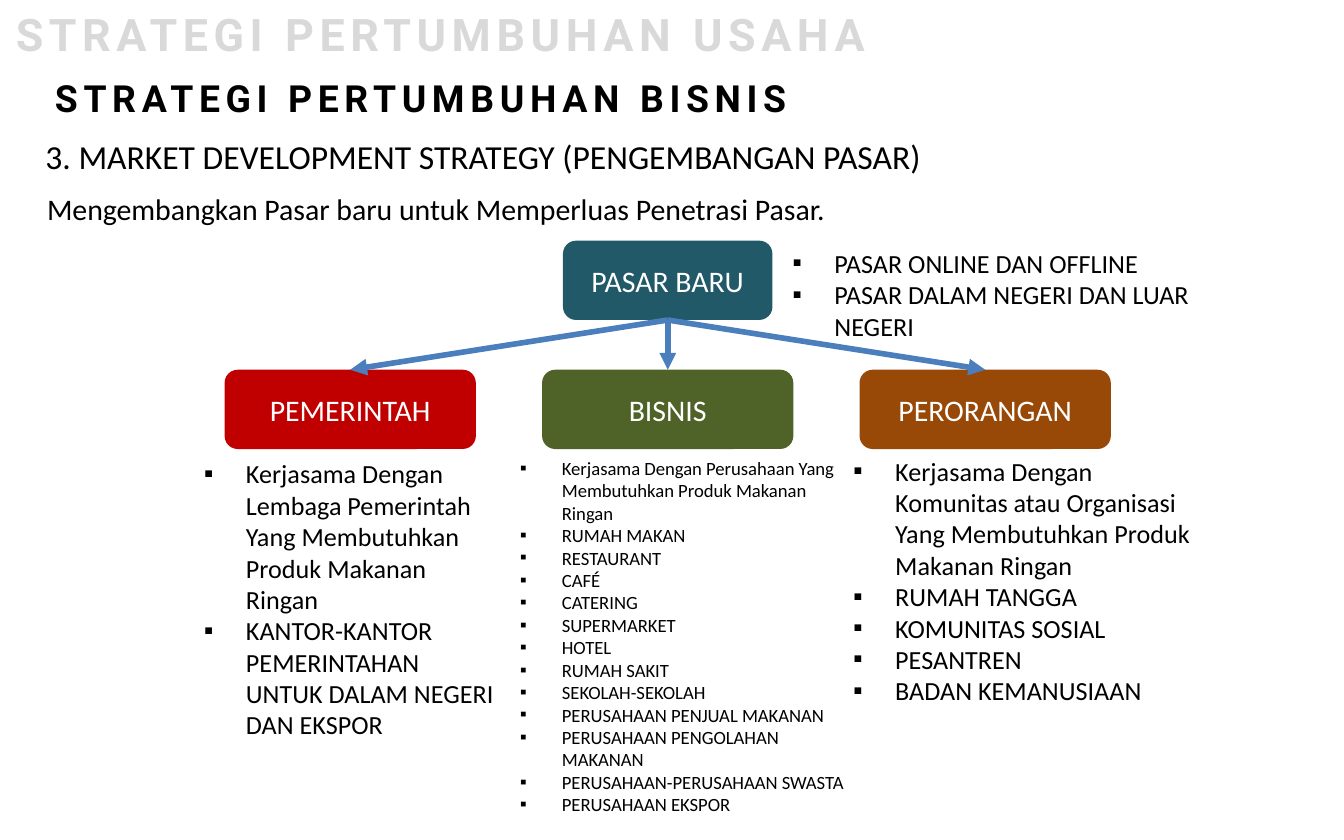
from lxml.etree import SubElement
from pptx import Presentation
from pptx.dml.color import RGBColor
from pptx.enum.shapes import MSO_CONNECTOR as Connector, MSO_SHAPE as Shape
from pptx.enum.text import MSO_ANCHOR as Anchor, MSO_AUTO_SIZE as AutoSize, PP_ALIGN as Align
from pptx.oxml.ns import qn
from pptx.util import Cm, Pt


def color(value):
    return RGBColor.from_string(value)


def write(shape, lines, size, ink="000000", bullet=False, spacing=0, frame_format=None, align=None, **font_format):
    frame = shape.text_frame
    frame_format = {"word_wrap": True, "auto_size": AutoSize.SHAPE_TO_FIT_TEXT} | (frame_format or {})
    for name, value in frame_format.items():
        setattr(frame, name, value)
    for index, line in enumerate(lines):
        paragraph = frame.paragraphs[0] if index == 0 else frame.add_paragraph()
        paragraph.alignment = align
        if bullet:
            properties = paragraph._p.get_or_add_pPr()
            properties.set("marL", str(Cm(0.79)))
            properties.set("indent", str(-Cm(0.79)))
            SubElement(properties, qn("a:buFont")).set("typeface", "Calibri")
            SubElement(properties, qn("a:buChar")).set("char", "▪")
        run = paragraph.add_run()
        run.text = line
        for name, value in ({"name": "Calibri", "size": Pt(size)} | font_format).items():
            setattr(run.font, name, value)
        run.font.color.rgb = color(ink)
        if spacing:
            run.font._element.set("spc", str(spacing * 100))


presentation = Presentation()
presentation.slide_width, presentation.slide_height = Cm(25.4), Cm(15.88)
slide = presentation.slides.add_slide(presentation.slide_layouts[6])
shapes = slide.shapes

# Headings: left, top, width, height, text, format
roboto = {"name": "Roboto", "bold": True, "spacing": 3}
headings = [
    (0.61, 2.44, 17.22, 1.02, "3. MARKET DEVELOPMENT STRATEGY (PENGEMBANGAN PASAR)",
     {"size": 18, "frame_format": {"word_wrap": False}}),
    (0.64, 3.48, 23.5, 0.94, "Mengembangkan Pasar baru untuk Memperluas Penetrasi Pasar.", {"size": 16}),
    (0.79, 1.3, 23.93, 1.12, "STRATEGI PERTUMBUHAN BISNIS", {"size": 20} | roboto),
    (0.05, 0, 25.4, 1.27, "STRATEGI PERTUMBUHAN USAHA", {"size": 24, "ink": "D9D9D9"} | roboto),
]
for *place, text, text_format in headings:
    write(shapes.add_textbox(*map(Cm, place)), [text], **text_format)

# Market boxes: centre, top, width, fill, label
middle, step = 12.62, 6
root_top, branch_top, box_height = 4.55, 6.99, 1.5
boxes = [
    (middle, root_top, 3.96, "215968", "PASAR BARU"),
    (middle - step, branch_top, 4.75, "C00000", "PEMERINTAH"),
    (middle, branch_top, 4.75, "4F6228", "BISNIS"),
    (middle + step, branch_top, 4.75, "984807", "PERORANGAN"),
]
for center, top, width, fill, label in boxes:
    box = shapes.add_shape(Shape.ROUNDED_RECTANGLE, Cm(center - width / 2), Cm(top), Cm(width), Cm(box_height))
    box.shadow.inherit = False
    box.fill.solid()
    box.fill.fore_color.rgb = color(fill)
    box.line.fill.background()
    box_frame = {"auto_size": AutoSize.NONE, "vertical_anchor": Anchor.MIDDLE}
    write(box, [label], 16, "FFFFFF", frame_format=box_frame, align=Align.CENTER)

# Arrows from the new market to its three branches
for offset in (0, -step, step):
    arrow = shapes.add_connector(Connector.STRAIGHT, Cm(middle), Cm(root_top + box_height),
                                 Cm(middle + offset), Cm(branch_top))
    arrow.line.color.rgb = color("4B7EBC")
    arrow.line.width = Pt(3)
    SubElement(arrow.line._get_or_add_ln(), qn("a:tailEnd")).set("type", "triangle")
    SubElement(arrow._element.spPr, qn("a:effectLst"))

# Bullet lists: left, top, width, height, size, lines
lists = [
    (3.61, 8.53, 6, 5.64, 14, [
        "Kerjasama Dengan Lembaga Pemerintah Yang Membutuhkan Produk Makanan Ringan",
        "KANTOR-KANTOR PEMERINTAHAN UNTUK DALAM NEGERI DAN EKSPOR",
    ]),
    (9.58, 8.51, 6.93, 7.09, 10, [
        "Kerjasama Dengan Perusahaan Yang Membutuhkan Produk Makanan Ringan",
        "RUMAH MAKAN", "RESTAURANT", "CAFÉ", "CATERING", "SUPERMARKET", "HOTEL",
        "RUMAH SAKIT", "SEKOLAH-SEKOLAH", "PERUSAHAAN PENJUAL MAKANAN",
        "PERUSAHAAN PENGOLAHAN MAKANAN", "PERUSAHAAN-PERUSAHAAN SWASTA", "PERUSAHAAN EKSPOR",
    ]),
    (15.88, 8.48, 7.16, 5.05, 14, [
        "Kerjasama Dengan Komunitas atau Organisasi Yang Membutuhkan Produk Makanan Ringan",
        "RUMAH TANGGA", "KOMUNITAS SOSIAL", "PESANTREN", "BADAN KEMANUSIAAN",
    ]),
    (14.73, 4.55, 8.36, 2.06, 14, [
        "PASAR ONLINE DAN OFFLINE",
        "PASAR DALAM NEGERI DAN LUAR NEGERI",
    ]),
]
for *place, size, lines in lists:
    write(shapes.add_textbox(*map(Cm, place)), lines, size, bullet=True)

presentation.save("out.pptx")
